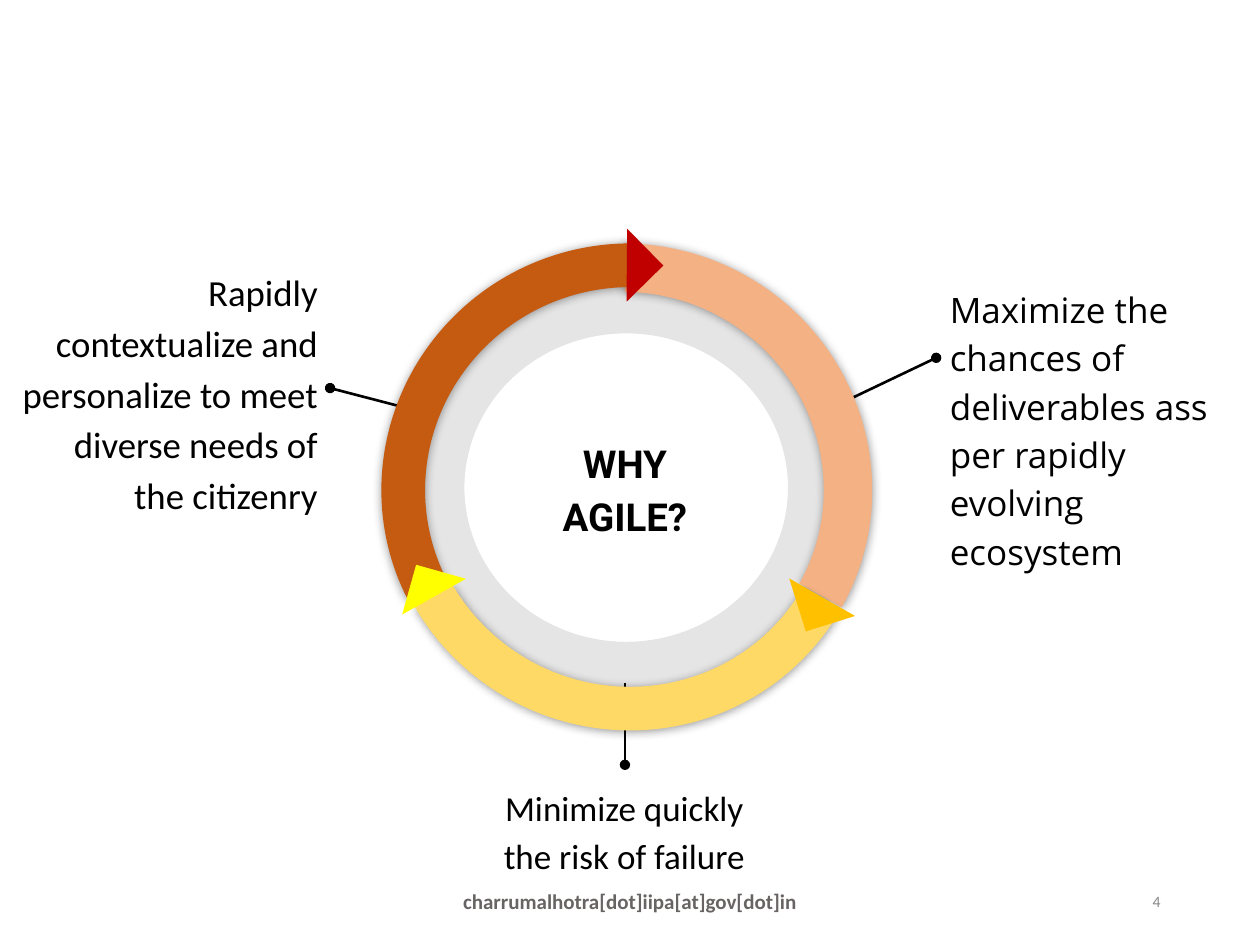
from dataclasses import dataclass

from lxml import etree
from pptx import Presentation
from pptx import util as u
from pptx.dml.color import RGBColor
from pptx.enum import shapes, text
from pptx.oxml import ns

BLACK = "000000"
LEFT, CENTER, RIGHT = text.PP_ALIGN.LEFT, text.PP_ALIGN.CENTER, text.PP_ALIGN.RIGHT


@dataclass
class Label:
    wording: str
    box: tuple[float, float, float, float]
    size: float
    font: str = "Calibri"
    color: str = BLACK
    bold: bool = False
    align: text.PP_ALIGN = CENTER
    middle: bool = False
    spacing: float = 1.15
    inset: tuple[float, float] = (0.1, 0.1)


@dataclass
class Callout:
    dot: tuple[float, float]
    ring: tuple[float, float]
    label: Label


@dataclass
class RingPart:
    kind: shapes.MSO_SHAPE
    box: tuple[float, float, float, float]
    rotation: float
    color: str
    adjustments: tuple[float, ...] = ()
    flipped: bool = False


def rgb(color: str) -> RGBColor:
    return RGBColor.from_string(color)


def add_child(parent, tag: str, **attributes):
    return etree.SubElement(parent, ns.qn(tag), **attributes)


def add_label(slide, label: Label) -> None:
    frame = slide.shapes.add_textbox(*map(u.Inches, label.box)).text_frame
    frame.word_wrap = True
    frame.margin_left = frame.margin_right = u.Inches(label.inset[0])
    frame.margin_top = frame.margin_bottom = u.Inches(label.inset[1])
    frame.vertical_anchor = text.MSO_ANCHOR.MIDDLE if label.middle else text.MSO_ANCHOR.TOP
    frame.text = label.wording
    paragraph = frame.paragraphs[0]
    paragraph.alignment = label.align
    paragraph.line_spacing = label.spacing
    font = paragraph.runs[0].font
    font.name, font.size, font.bold = label.font, u.Pt(label.size), label.bold
    font.color.rgb = rgb(label.color)


def add_callout(slide, callout: Callout) -> None:
    leader = slide.shapes.add_connector(
        shapes.MSO_CONNECTOR.STRAIGHT, *map(u.Inches, callout.dot + callout.ring))
    leader.line.color.rgb = rgb(BLACK)
    leader.line.width = u.Pt(1.5)
    add_child(leader.line._get_or_add_ln(), "a:headEnd", type="oval")
    add_child(leader._element.spPr, "a:effectLst")
    add_label(slide, callout.label)


def add_part(slide, part: RingPart):
    shape = slide.shapes.add_shape(part.kind, *map(u.Inches, part.box))
    shape.shadow.inherit = False
    shape.rotation = part.rotation
    shape.fill.solid()
    shape.fill.fore_color.rgb = rgb(part.color)
    shape.line.fill.background()
    for index, value in enumerate(part.adjustments):
        shape.adjustments[index] = value
    if part.flipped:
        shape._element.spPr.xfrm.set("flipH", "1")
    return shape


def add_arc(slide, part: RingPart) -> None:
    """Add a ring segment with a soft shadow below it."""
    effects = add_part(slide, part)._element.spPr.find(ns.qn("a:effectLst"))
    shadow = add_child(effects, "a:outerShdw", blurRad=str(u.Pt(5.6)), dist=str(u.Pt(0.8)),
                       dir="5400000", algn="ctr", rotWithShape="0")
    add_child(add_child(shadow, "a:srgbClr", val=BLACK), "a:alpha", val="40000")


ARC, TRIANGLE = shapes.MSO_SHAPE.BLOCK_ARC, shapes.MSO_SHAPE.RIGHT_TRIANGLE
RING = (3.02, 1.94, 3.91, 3.85)

HUB = RingPart(shapes.MSO_SHAPE.DONUT, (3.11, 2.07, 3.72, 3.6), 0, BLACK, (0.16,))
ARCS = [
    RingPart(ARC, RING, 29.2, "F4B183", (144.14, 0.01, 0.1)),
    RingPart(ARC, RING, 330.8, "C55A11", (143.49, 214.73, 0.09), True),
    RingPart(ARC, RING, 209.1, "FFD966", (143.16, 215.03, 0.09), True),
]
ARROWHEADS = [
    RingPart(TRIANGLE, (4.77, 1.9, 0.41, 0.41), 225.5, "C00000"),
    RingPart(TRIANGLE, (6.32, 4.52, 0.41, 0.44), 342.6, "FFC000"),
    RingPart(TRIANGLE, (3.24, 4.53, 0.41, 0.41), 105.7, "FFFF00"),
]
CALLOUTS = [
    Callout((2.62, 3.08), (3.31, 3.26), Label(
        "Rapidly contextualize and personalize to meet diverse needs of the citizenry",
        (0.03, 1.99, 2.59, 2.28), 21, align=RIGHT)),
    Callout((7.43, 2.84), (6.55, 3.26), Label(
        "Maximize the chances of deliverables ass per rapidly evolving ecosystem",
        (7.44, 2.14, 2.54, 2.52), 20, "Open Sans", align=LEFT)),
    Callout((4.96, 6.07), (4.96, 5.42), Label(
        "Minimize quickly the risk of failure", (3.86, 6.09, 2.19, 0.95), 20)),
]
QUESTION = Label("WHY AGILE?", (4.15, 3.4, 1.62, 0.92), 22, "Roboto", bold=True, middle=True)
FOOTER = [
    Label("charrumalhotra[dot]iipa[at]gov[dot]in", (3.31, 6.95, 3.38, 0.4), 12,
          color="696464", bold=True, middle=True, spacing=1.0, inset=(0.1, 0.05)),
    Label("4", (7.06, 6.95, 2.25, 0.4), 9, color="888888", align=RIGHT,
          middle=True, spacing=1.0, inset=(0.1, 0.05)),
]


def main() -> None:
    deck = Presentation()
    deck.slide_width, deck.slide_height = u.Inches(10), u.Inches(7.5)
    slide = deck.slides.add_slide(deck.slide_layouts[6])

    # Footer and slide number
    for label in FOOTER:
        add_label(slide, label)

    # Translucent hub
    hub = add_part(slide, HUB)
    hub_color = hub._element.spPr.find(ns.qn("a:solidFill"))[0]
    add_child(hub_color, "a:alpha", val="10000")

    # Reasons around the ring and the question inside it
    for callout in CALLOUTS:
        add_callout(slide, callout)
    add_label(slide, QUESTION)

    # Ring segments and their arrowheads
    for arc in ARCS:
        add_arc(slide, arc)
    for arrowhead in ARROWHEADS:
        add_part(slide, arrowhead)

    deck.save("out.pptx")


if __name__ == "__main__":
    main()
